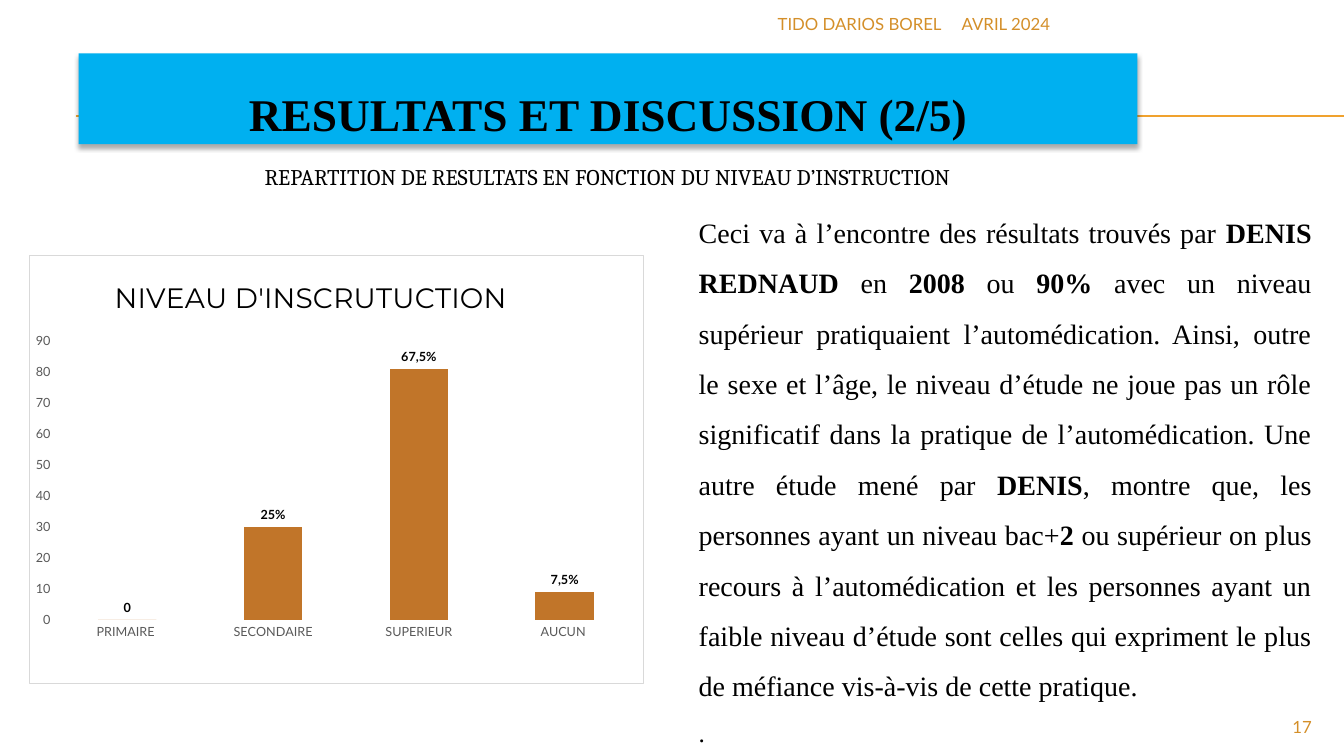
"""Build the slide on survey results by level of education."""
import lxml.etree
import pptx
import pptx.chart.data
import pptx.dml.color
import pptx.enum.chart
import pptx.enum.shapes
import pptx.enum.text
import pptx.oxml
import pptx.oxml.ns
import pptx.util

PX = 9144
COLORS = {
    "white": "FFFFFF", "black": "000000", "banner": "00B0F0", "rule": "F0A22E",
    "footer": "D48F29", "bar": "C17529", "axis": "595959", "border": "D9D9D9",
}
LEVELS = {"PRIMAIRE ": 0, "SECONDAIRE": 30, "SUPERIEUR": 81, "AUCUN ": 9}
SHARES = {1: "25%", 2: "67,5%", 3: "7,5%"}
COMMENT = (
    "Ceci va à l’encontre des résultats trouvés par *DENIS REDNAUD* en *2008* ou *90%* "
    "avec un niveau supérieur pratiquaient l’automédication. Ainsi, outre le sexe et l’âge, "
    "le niveau d’étude ne joue pas un rôle significatif dans la pratique de l’automédication. "
    "Une autre étude mené par *DENIS*, montre que, les personnes ayant un niveau bac+*2* ou "
    "supérieur on plus recours à l’automédication et les personnes ayant un faible niveau "
    "d’étude sont celles qui expriment le plus de méfiance vis-à-vis de cette pratique."
)
ALIGN = pptx.enum.text.PP_ALIGN
ANCHOR = pptx.enum.text.MSO_ANCHOR


def rgb(name):
    """Return the named colour."""
    return pptx.dml.color.RGBColor.from_string(COLORS[name])


def xml(markup):
    """Parse markup that uses the a and c prefixes."""
    head, rest = markup.split(">", 1) if "/>" not in markup.split(">")[0] + ">" else (markup[:-2], None)
    declared = f"{head} {pptx.oxml.ns.nsdecls('a', 'c')}"
    return pptx.oxml.parse_xml(declared + ("/>" if rest is None else ">" + rest))


def place(shape, left, top, width, height):
    """Move and size a shape in px."""
    shape.left, shape.top = left * PX, top * PX
    shape.width, shape.height = width * PX, height * PX


def set_font(font, size, name, color, bold=False):
    """Format a font."""
    font.size, font.name, font.bold = pptx.util.Pt(size), name, bold
    font.color.rgb = rgb(color)


def write(paragraph, text, size=12, name="Lato", color="black", bold=False,
          align=ALIGN.LEFT, spacing=1.0):
    """Write text in a paragraph, with starred parts in bold."""
    paragraph.alignment, paragraph.line_spacing = align, spacing
    paragraph.space_before = paragraph.space_after = pptx.util.Pt(0)
    for index, part in enumerate(text.split("*")):
        run = paragraph.add_run()
        run.text = part
        set_font(run.font, size, name, color, bold or index % 2 == 1)


def set_frame(shape, anchor):
    """Make a text frame wrap at a fixed size and return it."""
    frame = shape.text_frame
    frame.word_wrap, frame.vertical_anchor = True, anchor
    frame.auto_size = pptx.enum.text.MSO_AUTO_SIZE.NONE
    return frame


def add_rule(slide, top):
    """Add a horizontal rule behind the other shapes."""
    rule = slide.shapes.add_connector(
        pptx.enum.shapes.MSO_CONNECTOR.STRAIGHT, 75 * PX, top * PX, 1333 * PX, top * PX)
    rule.line.color.rgb, rule.line.width = rgb("rule"), pptx.util.Pt(0.75)
    rule._element.spPr.append(xml("<a:effectLst/>"))
    slide.shapes._spTree.insert(2, rule._element)


def fill_title(title):
    """Format the title as a shadowed banner."""
    place(title, 78, 53, 1050, 90)
    title.fill.solid()
    title.fill.fore_color.rgb = rgb("banner")
    title._element.spPr.append(xml(
        '<a:effectLst><a:outerShdw blurRad="44450" dist="27940" dir="5400000" rotWithShape="0">'
        '<a:srgbClr val="000000"><a:alpha val="32000"/></a:srgbClr></a:outerShdw></a:effectLst>'))
    frame = set_frame(title, ANCHOR.BOTTOM)
    frame.margin_bottom = 3 * PX
    write(frame.paragraphs[0], "RESULTATS ET DISCUSSION (2/5)", size=32.4,
          name="Times New Roman", bold=True, align=ALIGN.CENTER)


def fill_body(body):
    """Write the comment in the body placeholder, without bullets."""
    place(body, 683, 192, 628, 560)
    frame = set_frame(body, ANCHOR.TOP)
    for paragraph, text, size in ((frame.paragraphs[0], COMMENT, 20),
                                  (frame.add_paragraph(), ".", 18)):
        write(paragraph, text, size=size, name="Times New Roman",
              align=ALIGN.JUSTIFY, spacing=1.5)
        properties = paragraph._p.get_or_add_pPr()
        properties.set("marL", "0")
        properties.set("indent", "0")
        properties.append(xml("<a:buNone/>"))


def add_label(slide, text, box, align=ALIGN.LEFT):
    """Add a header or footer text."""
    label = slide.shapes.add_textbox(0, 0, 0, 0)
    place(label, *box)
    write(set_frame(label, ANCHOR.MIDDLE).paragraphs[0], text, color="footer", align=align)


def add_subtitle(slide):
    """Add the subtitle in a white box."""
    box = slide.shapes.add_shape(pptx.enum.shapes.MSO_SHAPE.RECTANGLE, 0, 0, 0, 0)
    place(box, 177, 155, 851, 37)
    box.shadow.inherit = False
    box.fill.solid()
    box.fill.fore_color.rgb = box.line.color.rgb = rgb("white")
    box.line.width = pptx.util.Pt(0.5)
    write(set_frame(box, ANCHOR.MIDDLE).paragraphs[0],
          "REPARTITION DE RESULTATS EN FONCTION DU NIVEAU D’INSTRUCTION",
          size=16, name="Cambria", align=ALIGN.CENTER, spacing=1.15)


def set_layout(element, index, target="", **fractions):
    """Give a chart part a manual layout."""
    for layout in element.findall(pptx.oxml.ns.qn("c:layout")):
        element.remove(layout)
    modes = '<c:xMode val="edge"/><c:yMode val="edge"/>'
    sizes = "".join(f'<c:{key} val="{value}"/>' for key, value in fractions.items())
    element.insert(index, xml(
        f"<c:layout><c:manualLayout>{target}{modes}{sizes}</c:manualLayout></c:layout>"))


def format_axis(axis):
    """Hide the line, ticks and grid of an axis."""
    axis.has_major_gridlines = False
    axis.major_tick_mark = axis.minor_tick_mark = pptx.enum.chart.XL_TICK_MARK.NONE
    axis.format.line.fill.background()
    set_font(axis.tick_labels.font, 9, "Lato", "axis")


def add_level_chart(slide):
    """Add the column chart of education levels."""
    data = pptx.chart.data.CategoryChartData()
    data.categories = list(LEVELS)
    data.add_series("NIVEAU D'INSCRUTUCTION", list(LEVELS.values()))
    chart = slide.shapes.add_chart(
        pptx.enum.chart.XL_CHART_TYPE.COLUMN_CLUSTERED,
        29 * PX, 253 * PX, 610 * PX, 426 * PX, data).chart
    set_font(chart.font, 10, "Lato", "black")
    chart.has_legend = False
    write(chart.chart_title.text_frame.paragraphs[0], "NIVEAU D'INSCRUTUCTION",
          size=20, name="Montserrat", align=ALIGN.CENTER)
    set_layout(chart.chart_title._element, 1, x=0.13, y=0.04)
    plot_area = chart._chartSpace.chart.plotArea
    set_layout(plot_area, 0, '<c:layoutTarget val="inner"/>', x=0.04, y=0.2, w=0.95, h=0.65)
    chart._chartSpace.chart.addnext(xml(
        f'<c:spPr><a:solidFill><a:srgbClr val="{COLORS["white"]}"/></a:solidFill><a:ln w="9525">'
        f'<a:solidFill><a:srgbClr val="{COLORS["border"]}"/></a:solidFill></a:ln></c:spPr>'))
    for axis in (chart.category_axis, chart.value_axis):
        format_axis(axis)
    chart.value_axis.minimum_scale, chart.value_axis.maximum_scale = 0, 90
    chart.value_axis.major_unit = 10
    plot = chart.plots[0]
    plot.gap_width, plot.vary_by_categories = 150, False
    series = plot.series[0]
    series.format.fill.solid()
    series.format.fill.fore_color.rgb = rgb("bar")
    labels = series.data_labels
    labels.show_value = True
    labels.position = pptx.enum.chart.XL_LABEL_POSITION.OUTSIDE_END
    set_font(labels.font, 9, "Lato", "black", bold=True)
    for index, share in SHARES.items():
        label = series.points[index].data_label
        write(label.text_frame.paragraphs[0], share, size=9, bold=True, align=ALIGN.CENTER)
        label.position = pptx.enum.chart.XL_LABEL_POSITION.OUTSIDE_END


def main():
    """Build and save the presentation."""
    presentation = pptx.Presentation()
    presentation.slide_width, presentation.slide_height = 1333 * PX, 750 * PX
    slide = presentation.slides.add_slide(presentation.slide_layouts[1])
    for top in (115, 116):
        add_rule(slide, top)
    fill_title(slide.shapes.title)
    fill_body(slide.placeholders[1])
    add_label(slide, "AVRIL 2024", (944, 8, 367, 32))
    add_label(slide, "TIDO DARIOS BOREL", (522, 8, 422, 32), ALIGN.RIGHT)
    add_label(slide, "17", (1200, 708, 111, 27), ALIGN.RIGHT)
    add_subtitle(slide)
    add_level_chart(slide)
    presentation.save("out.pptx")


if __name__ == "__main__":
    main()
